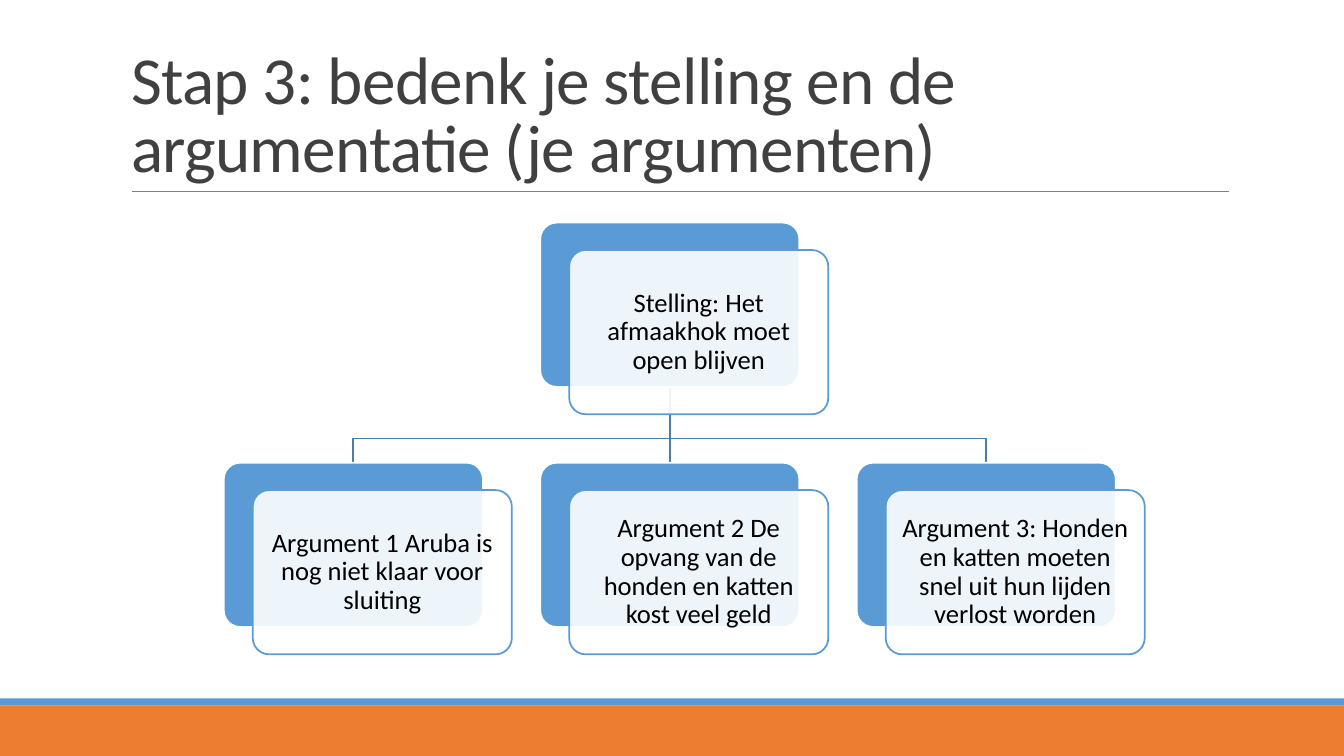
from lxml.etree import SubElement
from pptx import Presentation
from pptx.dml.color import RGBColor
from pptx.enum.shapes import MSO_CONNECTOR as Link, MSO_SHAPE as Preset
from pptx.enum.text import MSO_ANCHOR as Anchor, MSO_AUTO_SIZE as AutoSize, PP_ALIGN as Align
from pptx.oxml.ns import qn
from pptx.util import Cm, Pt

WHITE = RGBColor(0xFF, 0xFF, 0xFF)
BLACK = RGBColor(0x00, 0x00, 0x00)
INK = RGBColor(0x40, 0x40, 0x40)
GRAY = RGBColor(0x80, 0x80, 0x80)
BLUE = RGBColor(0x5B, 0x9B, 0xD5)
STEEL = RGBColor(0x49, 0x7C, 0xAB)
ORANGE = RGBColor(0xED, 0x7D, 0x31)
FONT = "Calibri"

TITLE = "Stap 3: bedenk je stelling en de argumentatie (je argumenten)"
THESIS = "Stelling: Het afmaakhok moet open blijven"
ARGUMENTS = [
    "Argument 1 Aruba is nog niet klaar voor sluiting",
    "Argument 2 De opvang van de honden en katten kost veel geld",
    "Argument 3: Honden en katten moeten snel uit hun lijden verlost worden",
]

PAGE_WIDTH, PAGE_HEIGHT = Cm(33.87), Cm(19.05)
CARD_WIDTH, CARD_HEIGHT = Cm(6.53), Cm(4.14)
SHIFT_X, SHIFT_Y = Cm(0.73), Cm(0.69)


def format_span(span, size, color):
    span.font.name = FONT
    span.font.size = Pt(size)
    span.font.color.rgb = color


def add_box(page, preset, left, top, width, height, fill, line=None):
    box = page.shapes.add_shape(preset, left, top, width, height)
    box.shadow.inherit = False
    box.fill.solid()
    box.fill.fore_color.rgb = fill
    if line is None:
        box.line.fill.background()
    else:
        box.line.color.rgb = line
        box.line.width = Pt(1.25)
    return box


def add_line(page, start, end, color, width):
    line = page.shapes.add_connector(Link.STRAIGHT, *start, *end)
    line.line.color.rgb = color
    line.line.width = Pt(width)
    SubElement(line._element.spPr, qn("a:effectLst"))


def add_footer(page, top, height):
    stripe = Cm(0.18)
    add_box(page, Preset.RECTANGLE, 0, top + stripe, PAGE_WIDTH, height - stripe, ORANGE)
    add_box(page, Preset.RECTANGLE, 0, top, PAGE_WIDTH, stripe, BLUE)


def add_heading(page, left, top, width, height):
    title = page.shapes.title
    title.left, title.top, title.width, title.height = left, top, width, height
    frame = title.text_frame
    frame.text = TITLE
    frame.word_wrap = True
    frame.auto_size = AutoSize.NONE
    frame.vertical_anchor = Anchor.BOTTOM
    para = frame.paragraphs[0]
    para.alignment = Align.LEFT
    para.line_spacing = 0.85
    span = para.runs[0]
    format_span(span, 48, INK)
    span._r.get_or_add_rPr().set("spc", "-50")
    bottom = top + height
    add_line(page, (left + Cm(0.28), bottom), (left + width - Cm(0.03), bottom), GRAY, 0.5)


def add_card(page, left, top, text):
    back = add_box(page, Preset.ROUNDED_RECTANGLE, left, top,
                   CARD_WIDTH, CARD_HEIGHT, BLUE, WHITE)
    front = add_box(page, Preset.ROUNDED_RECTANGLE, left + SHIFT_X, top + SHIFT_Y,
                    CARD_WIDTH, CARD_HEIGHT, WHITE, BLUE)
    for box in (back, front):
        box.adjustments[0] = 0.1
    fill_color = front._element.spPr.find(qn("a:solidFill"))[0]
    SubElement(fill_color, qn("a:alpha")).set("val", "90000")
    frame = front.text_frame
    frame.text = text
    frame.word_wrap = True
    frame.vertical_anchor = Anchor.MIDDLE
    frame.margin_left = frame.margin_right = Cm(0.2)
    frame.margin_top = frame.margin_bottom = Cm(0.2)
    para = frame.paragraphs[0]
    para.alignment = Align.CENTER
    para.line_spacing = 0.9
    format_span(para.runs[0], 19, BLACK)


def add_branch(page, start, end):
    if start[0] == end[0]:
        add_line(page, start, end, STEEL, 1.25)
        return
    bend = end[1] - Cm(0.61)
    builder = page.shapes.build_freeform(*start)
    builder.add_line_segments([(start[0], bend), (end[0], bend), end], close=False)
    branch = builder.convert_to_shape()
    branch.shadow.inherit = False
    branch.fill.background()
    branch.line.color.rgb = STEEL
    branch.line.width = Pt(1.25)


def add_tree(page, left, top, width, height):
    pitch = (width - SHIFT_X - CARD_WIDTH) // (len(ARGUMENTS) - 1)
    lefts = [left + index * pitch for index in range(len(ARGUMENTS))]
    root_left = lefts[len(lefts) // 2]
    row_top = top + height - SHIFT_Y - CARD_HEIGHT
    half = CARD_WIDTH // 2
    for card_left in lefts:
        add_branch(page, (root_left + half, top + CARD_HEIGHT), (card_left + half, row_top))
    add_card(page, root_left, top, THESIS)
    for card_left, text in zip(lefts, ARGUMENTS):
        add_card(page, card_left, row_top, text)


def main():
    deck = Presentation()
    deck.slide_width, deck.slide_height = PAGE_WIDTH, PAGE_HEIGHT
    page = deck.slides.add_slide(deck.slide_layouts[5])
    add_footer(page, Cm(17.6), Cm(1.45))
    add_heading(page, Cm(3.05), Cm(0.79), Cm(27.94), Cm(4.04))
    add_tree(page, Cm(5.64), Cm(5.61), Cm(23.21), Cm(10.88))
    deck.save("out.pptx")


if __name__ == "__main__":
    main()
